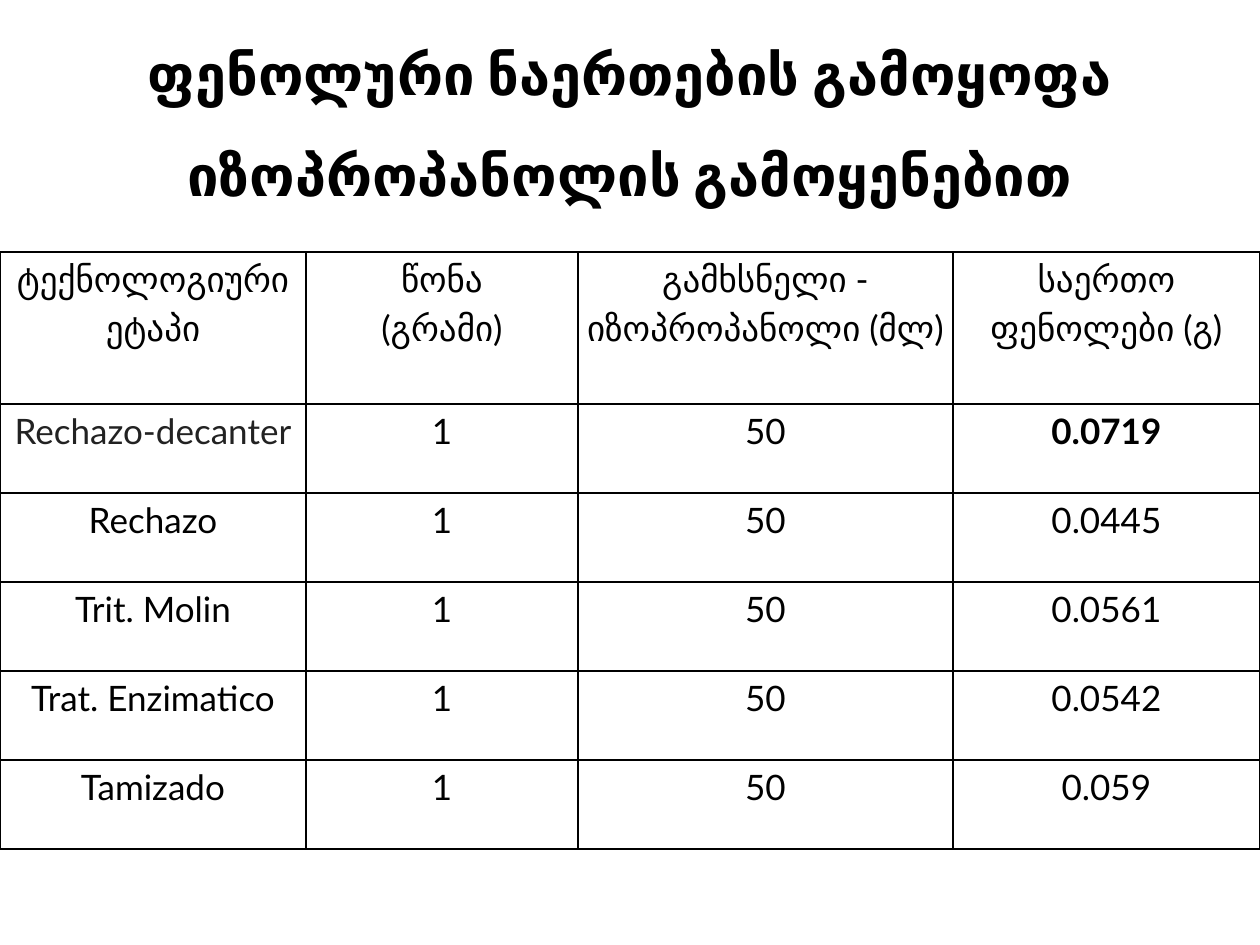
from lxml import etree
from pptx import Presentation, util as u
from pptx.dml.color import RGBColor
from pptx.enum import text as t
from pptx.oxml import ns

BLACK = RGBColor(0, 0, 0)
GRAY = RGBColor(0x22, 0x22, 0x22)
WHITE = RGBColor(255, 255, 255)
SCALE = 914400 / 126

TITLE = "ფენოლური ნაერთების გამოყოფა იზოპროპანოლის გამოყენებით"
HEADS = ["ტექნოლოგიური ეტაპი", "წონა\n(გრამი)",
         "გამხსნელი - იზოპროპანოლი (მლ)", "საერთო ფენოლები (გ)"]
YIELDS = [("Rechazo-decanter", "0.0719"), ("Rechazo", "0.0445"),
          ("Trit. Molin", "0.0561"), ("Trat. Enzimatico", "0.0542"),
          ("Tamizado", "0.059")]
COLS = [306, 272, 375, 307]
ROWS = [152] + [89] * len(YIELDS)


def px(n):
    """Turn pixels into EMU."""
    return u.Emu(round(n * SCALE))


def write(frame, words, size=20, font="Lato", color=BLACK, bold=False, gap=1.15):
    """Fill a text frame with centred paragraphs, one for each line."""
    frame.word_wrap = True
    frame.text = words
    for para in frame.paragraphs:
        para.alignment = t.PP_ALIGN.CENTER
        para.line_spacing = gap
        para.space_before = para.space_after = u.Pt(0)
        for run in para.runs:
            run.font.name = font
            run.font.size = u.Pt(size)
            run.font.bold = bold
            run.font.color.rgb = color


def frame_cell(cell):
    """Draw a thin black border on all four sides of a cell."""
    props = cell._tc.get_or_add_tcPr()
    for side in ("lnL", "lnR", "lnT", "lnB"):
        line = etree.SubElement(props, ns.qn("a:" + side), w=str(u.Pt(1)))
        fill = etree.SubElement(line, ns.qn("a:solidFill"))
        etree.SubElement(fill, ns.qn("a:srgbClr"), val=str(BLACK))


def add_title(slide, x, y, w, h):
    """Place the title in its box."""
    title = slide.shapes.title
    title.left, title.top, title.width, title.height = map(px, (x, y, w, h))
    write(title.text_frame, TITLE, size=32, font="Calibri", bold=True, gap=1.5)
    title.text_frame.vertical_anchor = t.MSO_ANCHOR.TOP
    title.text_frame.auto_size = t.MSO_AUTO_SIZE.NONE


def add_yields(slide, x, y, w, h):
    """Place the table of phenol yields in its box."""
    data = [HEADS] + [[stage, "1", "50", grams] for stage, grams in YIELDS]
    table = slide.shapes.add_table(len(ROWS), len(COLS), *map(px, (x, y, w, h))).table
    table.first_row = table.horz_banding = False
    for col, size in zip(table.columns, COLS):
        col.width = px(size)
    for row, size in zip(table.rows, ROWS):
        row.height = px(size)
    for i, line in enumerate(data):
        for j, words in enumerate(line):
            cell = table.cell(i, j)
            cell.margin_left = cell.margin_right = px(8 if i and j == 3 else 9)
            cell.margin_top = cell.margin_bottom = 0
            frame_cell(cell)
            cell.fill.solid()
            cell.fill.fore_color.rgb = WHITE
            write(cell.text_frame, words, bold=(i, j) == (1, 3),
                  color=GRAY if (i, j) == (1, 0) else BLACK)


def main():
    """Build and save the slide."""
    deck = Presentation()
    deck.slide_width, deck.slide_height = px(1260), px(945)
    slide = deck.slides.add_slide(deck.slide_layouts[5])
    add_yields(slide, 0, 252, sum(COLS), sum(ROWS))
    add_title(slide, 0, 0, 1260, 207)
    deck.save("out.pptx")


if __name__ == "__main__":
    main()
